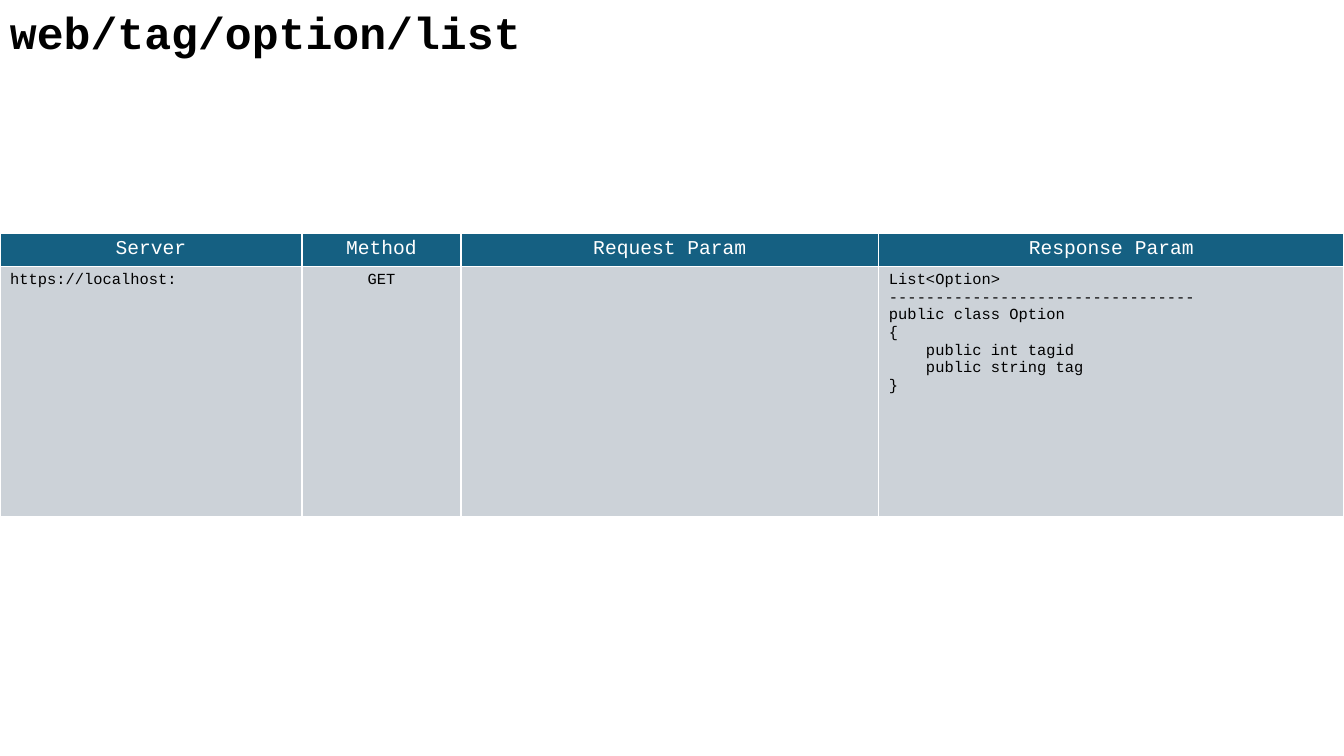
from lxml import etree
from pptx import Presentation
from pptx.dml.color import RGBColor
from pptx.enum.text import MSO_AUTO_SIZE, PP_ALIGN as Align
from pptx.oxml.ns import qn
from pptx.util import Emu, Pt

SLIDE_W, SLIDE_H = 1344, 756
SCALE = 12192000 / SLIDE_W
FONT = "Courier New"
BLACK, WHITE, HEADER_BLUE, BODY_GREY = "000000", "FFFFFF", "156082", "CCD2D8"

COLUMN_WIDTHS = [302, 159, 418, 465]
ROW_HEIGHTS = [33, 250]
HEADINGS = ["Server", "Method", "Request Param", "Response Param"]
OPTION_CLASS = """List<Option>
---------------------------------
public class Option
{
    public int tagid
    public string tag
}"""
ENDPOINT = ["https://localhost:", "GET", "", OPTION_CLASS]
ENDPOINT_ALIGNS = [Align.LEFT, Align.CENTER, Align.LEFT, Align.LEFT]


def px(length):
    return Emu(round(length * SCALE))


def color(hex_code):
    return RGBColor.from_string(hex_code)


def write(frame, text, size, fill=BLACK, bold=False, align=Align.LEFT):
    frame.word_wrap = True
    frame.text = text
    for paragraph in frame.paragraphs:
        paragraph.alignment = align
        font = paragraph.font
        font.name, font.size, font.bold = FONT, Pt(size), bold
        font.color.rgb = color(fill)
        for run in paragraph.runs:
            run.font.name, run.font.size, run.font.bold = FONT, Pt(size), bold
            run.font.color.rgb = color(fill)


def paint_cell(cell, fill):
    """Give the cell thin white borders and a solid fill."""
    properties = cell._tc.get_or_add_tcPr()
    for side in ("a:lnL", "a:lnR", "a:lnT", "a:lnB"):
        border = etree.SubElement(properties, qn(side), w=str(Pt(1)))
        solid = etree.SubElement(border, qn("a:solidFill"))
        etree.SubElement(solid, qn("a:srgbClr"), val=WHITE)
    cell.fill.solid()
    cell.fill.fore_color.rgb = color(fill)


def add_title(slide, left, top, width, height):
    title = slide.shapes.add_textbox(px(left), px(top), px(width), px(height))
    write(title.text_frame, "web/tag/option/list", 32, bold=True)
    title.text_frame.auto_size = MSO_AUTO_SIZE.SHAPE_TO_FIT_TEXT


def add_endpoint_table(slide, left, top):
    table = slide.shapes.add_table(
        len(ROW_HEIGHTS), len(COLUMN_WIDTHS), px(left), px(top),
        px(sum(COLUMN_WIDTHS)), px(sum(ROW_HEIGHTS))).table
    for column, width in zip(table.columns, COLUMN_WIDTHS):
        column.width = px(width)
    for row, height in zip(table.rows, ROW_HEIGHTS):
        row.height = px(height)
    for index, heading in enumerate(HEADINGS):
        header, body = table.cell(0, index), table.cell(1, index)
        paint_cell(header, HEADER_BLUE)
        write(header.text_frame, heading, 14, fill=WHITE, align=Align.CENTER)
        paint_cell(body, BODY_GREY)
        write(body.text_frame, ENDPOINT[index], 11, align=ENDPOINT_ALIGNS[index])


def main():
    deck = Presentation()
    deck.slide_width, deck.slide_height = px(SLIDE_W), px(SLIDE_H)
    slide = deck.slides.add_slide(deck.slide_layouts[6])
    add_title(slide, 0, 0, 953, 65)
    add_endpoint_table(slide, 0, 233)
    deck.save("out.pptx")


if __name__ == "__main__":
    main()
